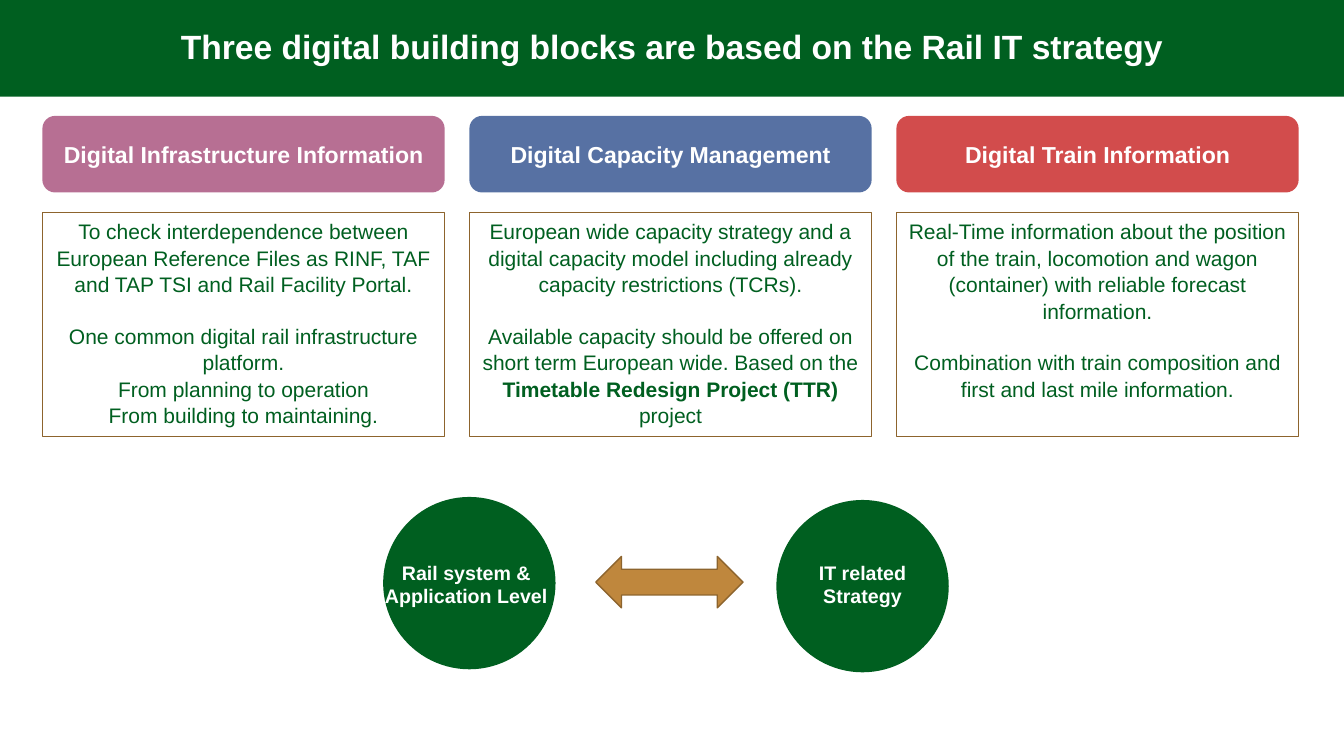
from dataclasses import dataclass

from lxml import etree
from pptx import Presentation
from pptx.dml.color import RGBColor
from pptx.enum.shapes import MSO_SHAPE
from pptx.enum.text import MSO_ANCHOR, PP_ALIGN
from pptx.oxml.ns import qn
from pptx.util import Inches, Pt


@dataclass(frozen=True)
class Theme:
    font: str = "Arial"
    green: str = "005F20"
    white: str = "FFFFFF"
    gold: str = "BF873D"
    brown: str = "8D642D"
    plum: str = "993366"
    navy: str = "10367D"
    red: str = "C00000"
    title_size: float = 24
    heading_size: float = 16.5
    body_size: float = 15
    circle_size: float = 14
    paragraph_gap: float = 18


@dataclass(frozen=True)
class Run:
    text: str
    bold: bool = False


@dataclass(frozen=True)
class Para:
    runs: tuple[Run, ...]
    gap: bool = False


@dataclass(frozen=True)
class Block:
    heading: str
    color: str
    paras: tuple[Para, ...]


@dataclass(frozen=True)
class Circle:
    left: float
    top: float
    label_left: float
    lines: tuple[str, ...]


THEME = Theme()

BLOCKS = (
    Block("Digital Infrastructure Information", THEME.plum, (
        Para((Run("To check interdependence between European Reference Files "
                  "as RINF, TAF and TAP TSI and Rail Facility Portal."),)),
        Para((Run("One common digital rail infrastructure platform."),), gap=True),
        Para((Run("From planning to operation"),)),
        Para((Run("From building to maintaining."),)),
    )),
    Block("Digital Capacity Management", THEME.navy, (
        Para((Run("European wide capacity strategy and a digital capacity model "
                  "including already capacity restrictions (TCRs)."),)),
        Para((Run("Available capacity should be offered on short term European "
                  "wide. Based on the "),
              Run("Timetable Redesign Project (TTR)", bold=True),
              Run(" project")), gap=True),
    )),
    Block("Digital Train Information", THEME.red, (
        Para((Run("Real-Time information about the position of the train, locomotion "
                  "and wagon (container) with reliable forecast information."),)),
        Para((Run("Combination with train composition and first and last mile "
                  "information."),), gap=True),
    )),
)

CIRCLES = (
    Circle(3.8, 4.93, 3.68, ("Rail system &", "Application Level")),
    Circle(7.7, 4.96, 7.61, ("IT related", "Strategy")),
)

BLOCK_LEFT, BLOCK_STEP, BLOCK_WIDTH = 0.42, 4.235, 3.99


def bold_lines(*lines: str) -> tuple[Para, ...]:
    return tuple(Para((Run(line, bold=True),)) for line in lines)


def add_box(slide, kind, left, top, width, height, fill=None, line=None, alpha=None):
    sp = slide.shapes.add_shape(
        kind, Inches(left), Inches(top), Inches(width), Inches(height))
    sp.shadow.inherit = False
    if fill:
        sp.fill.solid()
        sp.fill.fore_color.rgb = RGBColor.from_string(fill)
    else:
        sp.fill.background()
    if alpha:
        color = sp.fill._xPr.find(".//" + qn("a:srgbClr"))
        etree.SubElement(color, qn("a:alpha"), val=str(alpha * 1000))
    if line:
        sp.line.color.rgb = RGBColor.from_string(line)
        sp.line.width = Pt(1)
    else:
        sp.line.fill.background()
    return sp


def write(sp, paras: tuple[Para, ...], size: float, color: str,
          anchor=MSO_ANCHOR.MIDDLE, spacing: float = 1.0) -> None:
    tf = sp.text_frame
    tf.word_wrap = True
    tf.vertical_anchor = anchor
    for i, para in enumerate(paras):
        p = tf.paragraphs[0] if i == 0 else tf.add_paragraph()
        p.alignment = PP_ALIGN.CENTER
        p.line_spacing = spacing
        if para.gap:
            p.space_before = Pt(THEME.paragraph_gap)
        for run in para.runs:
            r = p.add_run()
            r.text = run.text
            r.font.name = THEME.font
            r.font.size = Pt(size)
            r.font.bold = run.bold
            r.font.color.rgb = RGBColor.from_string(color)


def add_block(slide, block: Block, left: float) -> None:
    body = add_box(slide, MSO_SHAPE.ROUNDED_RECTANGLE, left, 2.11, BLOCK_WIDTH, 2.22,
                   line=THEME.brown)
    body.adjustments[0] = 0
    write(body, block.paras, THEME.body_size, THEME.green, MSO_ANCHOR.TOP, 1.05)
    heading = add_box(slide, MSO_SHAPE.ROUNDED_RECTANGLE, left, 1.15, BLOCK_WIDTH, 0.76,
                      fill=block.color, alpha=70)
    write(heading, bold_lines(block.heading), THEME.heading_size, THEME.white)


def add_circle(slide, circle: Circle) -> None:
    add_box(slide, MSO_SHAPE.OVAL, circle.left, circle.top, 1.71, 1.71, fill=THEME.green)
    label = slide.shapes.add_textbox(
        Inches(circle.label_left), Inches(5.51), Inches(1.89), Inches(0.57))
    write(label, bold_lines(*circle.lines), THEME.circle_size, THEME.white)


def main() -> None:
    prs = Presentation()
    prs.slide_width, prs.slide_height = Inches(13.33), Inches(7.5)
    s = prs.slides.add_slide(prs.slide_layouts[6])

    # Title band
    title = add_box(s, MSO_SHAPE.RECTANGLE, 0, 0, 13.33, 0.96, fill=THEME.green)
    write(title, bold_lines("Three digital building blocks are based on the Rail IT strategy"),
          THEME.title_size, THEME.white, spacing=0.9)

    # Building blocks
    for i, block in enumerate(BLOCKS):
        add_block(s, block, BLOCK_LEFT + i * BLOCK_STEP)

    # Circles joined by a double arrow
    for circle in CIRCLES:
        add_circle(s, circle)
    add_box(s, MSO_SHAPE.LEFT_RIGHT_ARROW, 5.91, 5.52, 1.46, 0.51,
            fill=THEME.gold, line=THEME.brown)

    prs.save("out.pptx")


if __name__ == "__main__":
    main()
